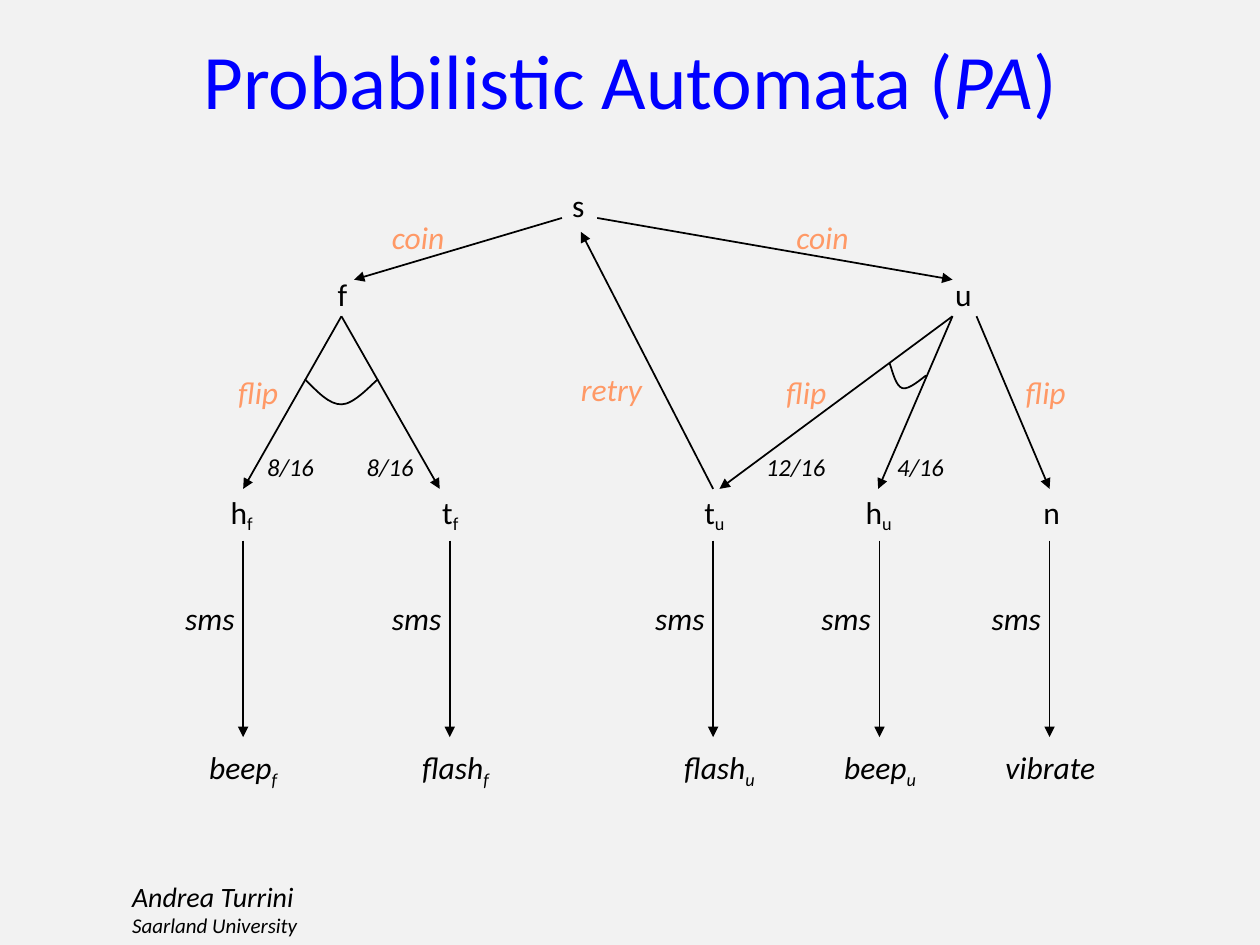
"""Build a slide showing a probabilistic automaton for flipping a fair or unfair coin."""
import pptx
import pptx.dml.color
import pptx.enum.shapes
import pptx.enum.text
import pptx.oxml.ns
import pptx.util
from lxml import etree

Inches, Pt = pptx.util.Inches, pptx.util.Pt
RGBColor = pptx.dml.color.RGBColor
qn = pptx.oxml.ns.qn

BLACK = RGBColor(0x00, 0x00, 0x00)
BLUE = RGBColor(0x00, 0x00, 0xFF)
ORANGE = RGBColor(0xFF, 0x99, 0x66)
PAPER = RGBColor(0xF2, 0xF2, 0xF2)
FONT = "Calibri"

TITLE = [("Probabilistic Automata (", False), ("PA", True), (")", False)]
FOOTER = [("Andrea Turrini", 16), ("Saarland University", 12)]

# Each branch: column, state (name, subscript, left, width), outcome (same).
BRANCHES = [
    (1.93, ("h", "f", 1.81, 0.22), ("beep", "f", 1.64, 0.66)),
    (3.57, ("t", "f", 3.49, 0.20), ("flash", "f", 3.33, 0.64)),
    (5.66, ("t", "u", 5.57, 0.24), ("flash", "u", 5.41, 0.64)),
    (6.98, ("h", "u", 6.85, 0.26), ("beep", "u", 6.68, 0.66)),
    (8.33, ("n", "", 8.26, 0.18), ("vibrate", "", 7.96, 0.79)),
]
STATE_TOP, SMS_TOP, OUTCOME_TOP = 3.84, 4.68, 5.87
SMS_OFFSET, SMS_WIDTH = -0.48, 0.46
SMS_START, SMS_END = 4.29, 5.85

ROOTS = [("s", 4.52, 1.41, 0.16), ("f", 2.66, 2.11, 0.11), ("u", 7.56, 2.11, 0.18)]
ACTIONS = [
    ("coin", 3.09, 1.66, 0.57), ("coin", 6.30, 1.66, 0.50),
    ("flip", 1.87, 2.89, 0.43), ("flip", 6.22, 2.89, 0.43),
    ("flip", 8.12, 2.89, 0.70), ("retry", 4.59, 2.87, 0.61),
]
PROBABILITY_TOP = 3.53
PROBABILITIES = [("8/16", 2.10, 0.48), ("8/16", 2.89, 0.48),
                 ("12/16", 6.06, 0.58), ("4/16", 7.10, 0.48)]

COIN_START, COIN_END, FLIP_START, FLIP_END = 1.73, 2.22, 2.51, 3.88
TRANSITIONS = [
    ((4.46, COIN_START), (2.81, COIN_END)),
    ((4.74, COIN_START), (7.56, COIN_END)),
    ((2.71, FLIP_START), (1.93, FLIP_END)),
    ((2.71, FLIP_START), (3.49, FLIP_END)),
    ((7.56, FLIP_START), (5.71, FLIP_END)),
    ((7.56, FLIP_START), (6.97, FLIP_END)),
    ((7.75, FLIP_START), (8.33, FLIP_END)),
    ((5.66, FLIP_END), (4.61, 1.84)),
]
ARCS = [
    [(2.42, 3.01), (2.52, 3.11), (2.61, 3.21), (2.71, 3.21),
     (2.81, 3.21), (2.95, 3.05), (3.00, 3.01)],
    [(7.06, 2.88), (7.09, 2.97), (7.11, 3.06), (7.16, 3.08),
     (7.21, 3.10), (7.32, 3.00), (7.35, 2.98)],
]


def add_box(page, left, top, width, height, wrap=False):
    box = page.shapes.add_textbox(*map(Inches, (left, top, width, height)))
    box.text_frame.word_wrap = wrap
    return box.text_frame


def style(font, size, color, italic=None):
    font.name, font.size, font.italic = FONT, Pt(size), italic
    font.color.rgb = color


def add_label(page, text, left, top, width, color=BLACK, size=18, italic=False, subscript=""):
    frame = add_box(page, left, top, width, 0.38 if size == 18 else 0.32)
    frame.margin_left = frame.margin_right = Inches(0.02)
    frame.margin_top = Inches(0.07 if size == 18 else 0.06)
    frame.margin_bottom = Inches(0.05)
    paragraph = frame.paragraphs[0]
    style(paragraph.font, size, color, italic)
    paragraph.add_run().text = text
    if subscript:
        span = paragraph.add_run()
        span.text = subscript
        span.font._element.set("baseline", "-20000")


def add_arrow(page, start, end):
    arrow = page.shapes.add_connector(
        pptx.enum.shapes.MSO_CONNECTOR.STRAIGHT, *map(Inches, (*start, *end)))
    arrow.line.color.rgb = BLACK
    arrow.line.width = Pt(1)
    etree.SubElement(arrow.line._get_or_add_ln(), qn("a:tailEnd"), type="triangle")
    etree.SubElement(arrow._element.spPr, qn("a:effectLst"))


def add_arc(page, points):
    start, *others = [(Inches(x), Inches(y)) for x, y in points]
    builder = page.shapes.build_freeform(*start)
    builder.add_line_segments(others, close=False)
    arc = builder.convert_to_shape()
    arc.shadow.inherit = False
    arc.fill.background()
    arc.line.color.rgb = BLACK
    arc.line.width = Pt(1)
    outline = arc._element.find(".//" + qn("a:path"))
    segments = outline.findall(qn("a:lnTo"))
    for first in range(0, len(segments), 3):
        curve = etree.SubElement(outline, qn("a:cubicBezTo"))
        for segment in segments[first:first + 3]:
            curve.append(segment[0])
            outline.remove(segment)


def add_title(page):
    frame = add_box(page, 0.5, 0, 9, 1.25, wrap=True)
    frame.vertical_anchor = pptx.enum.text.MSO_ANCHOR.MIDDLE
    paragraph = frame.paragraphs[0]
    paragraph.alignment = pptx.enum.text.PP_ALIGN.CENTER
    style(paragraph.font, 44, BLUE)
    for text, italic in TITLE:
        span = paragraph.add_run()
        span.text, span.font.italic = text, italic


def add_footer(page):
    frame = add_box(page, 0.95, 6.93, 1.52, 0.57)
    frame.text = "\n".join(text for text, size in FOOTER)
    for paragraph, (text, size) in zip(frame.paragraphs, FOOTER):
        style(paragraph.font, size, BLACK, True)


def main():
    deck = pptx.Presentation()
    deck.slide_width, deck.slide_height = Inches(10), Inches(7.5)
    page = deck.slides.add_slide(deck.slide_layouts[6])
    page.background.fill.solid()
    page.background.fill.fore_color.rgb = PAPER

    add_footer(page)
    add_title(page)
    for start, end in TRANSITIONS:
        add_arrow(page, start, end)
    for points in ARCS:
        add_arc(page, points)
    for root in ROOTS:
        add_label(page, *root)
    for action in ACTIONS:
        add_label(page, *action, color=ORANGE, italic=True)
    for text, left, width in PROBABILITIES:
        add_label(page, text, left, PROBABILITY_TOP, width, size=14, italic=True)
    for column, state, outcome in BRANCHES:
        add_arrow(page, (column, SMS_START), (column, SMS_END))
        add_label(page, "sms", column + SMS_OFFSET, SMS_TOP, SMS_WIDTH, italic=True)
        for (text, subscript, left, width), top, italic in (
                (state, STATE_TOP, False), (outcome, OUTCOME_TOP, True)):
            add_label(page, text, left, top, width, italic=italic, subscript=subscript)

    deck.save("out.pptx")


if __name__ == "__main__":
    main()
